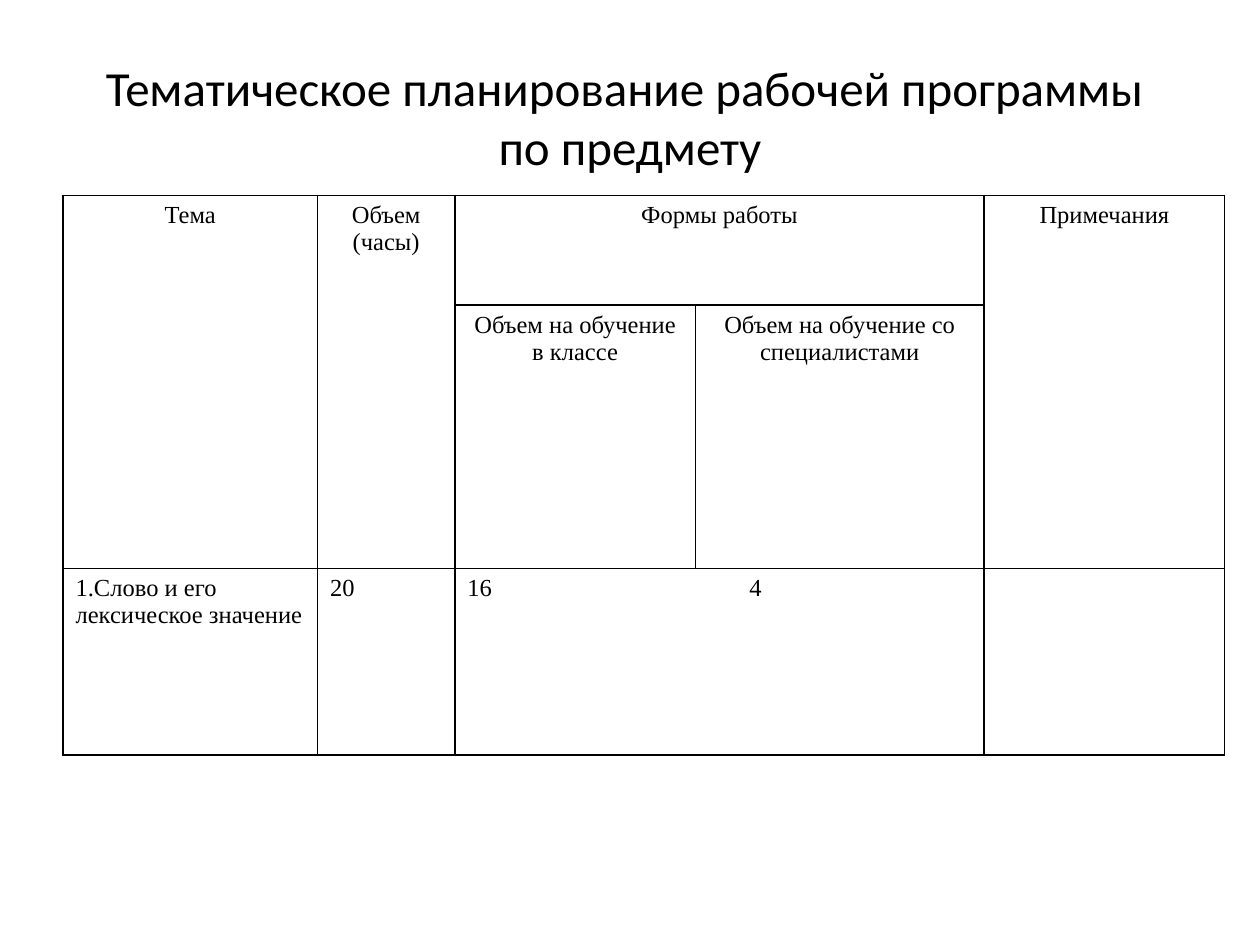
import pptx
import pptx.dml.color
import pptx.enum.text
import pptx.oxml
import pptx.oxml.ns
import pptx.util
from pptx.util import Cm

BLACK = pptx.dml.color.RGBColor(0x00, 0x00, 0x00)
CENTER = pptx.enum.text.PP_ALIGN.CENTER
LEFT = pptx.enum.text.PP_ALIGN.LEFT
NAMESPACE = pptx.oxml.ns.nsdecls("a")

COLUMN_WIDTHS = [5.13, 2.77, 4.85, 5.82, 4.85]
ROW_HEIGHTS = [2.21, 5.31, 3.76]
# First and last cell of each merged area, as (row, column)
MERGES = [
    ((0, 0), (1, 0)),
    ((0, 1), (1, 1)),
    ((0, 2), (0, 3)),
    ((0, 4), (1, 4)),
    ((2, 2), (2, 3)),
]
HEADER_ROWS = 2
CELL_TEXTS = {
    (0, 0): "Тема",
    (0, 1): "Объем (часы)",
    (0, 2): "Формы работы",
    (0, 4): "Примечания",
    (1, 2): "Объем на обучение в классе",
    (1, 3): "Объем на обучение со специалистами",
    (2, 0): "1.Слово и его лексическое значение",
    (2, 1): "20",
    (2, 2): "16\t4",
}


def style_paragraph(para, font_name, size, alignment):
    para.alignment = alignment
    para.font.name = font_name
    para.font.size = pptx.util.Pt(size)
    para.font.color.rgb = BLACK


def add_borders(cell):
    properties = cell._tc.get_or_add_tcPr()
    for side in ("lnL", "lnR", "lnT", "lnB"):
        properties.append(pptx.oxml.parse_xml(
            f'<a:{side} {NAMESPACE} w="12700"><a:solidFill>'
            f'<a:srgbClr val="{BLACK}"/></a:solidFill></a:{side}>'))


def add_tab_stop(para, position):
    para._p.get_or_add_pPr().append(pptx.oxml.parse_xml(
        f'<a:tabLst {NAMESPACE}><a:tab pos="{position}" algn="l"/></a:tabLst>'))


def add_title(page, left, top, width, height):
    box = page.shapes.add_textbox(left, top, width, height)
    frame = box.text_frame
    frame.word_wrap = True
    frame.vertical_anchor = pptx.enum.text.MSO_ANCHOR.MIDDLE
    para = frame.paragraphs[0]
    para.text = "Тематическое планирование рабочей программы \vпо предмету"
    style_paragraph(para, "Calibri", 28, CENTER)


def add_plan_table(page, left, top):
    table = page.shapes.add_table(
        len(ROW_HEIGHTS), len(COLUMN_WIDTHS), left, top,
        Cm(sum(COLUMN_WIDTHS)), Cm(sum(ROW_HEIGHTS))).table
    table.first_row = False
    table.horz_banding = False
    for column, width in zip(table.columns, COLUMN_WIDTHS):
        column.width = Cm(width)
    for row, height in zip(table.rows, ROW_HEIGHTS):
        row.height = Cm(height)

    # Plain bordered cells
    for cell in table.iter_cells():
        add_borders(cell)
        cell.fill.background()
    for first, last in MERGES:
        table.cell(*first).merge(table.cell(*last))

    # Headings are centred, data is left-aligned
    for (row, column), text in CELL_TEXTS.items():
        para = table.cell(row, column).text_frame.paragraphs[0]
        para.text = text
        style_paragraph(para, "Times New Roman", 14,
                        CENTER if row < HEADER_ROWS else LEFT)
        if "\t" in text:
            add_tab_stop(para, Cm(5.68))


def main():
    deck = pptx.Presentation()
    deck.slide_width = Cm(25.4)
    deck.slide_height = Cm(19.05)
    page = deck.slides.add_slide(deck.slide_layouts[6])
    add_title(page, Cm(1.27), Cm(0.76), Cm(22.86), Cm(3.18))
    add_plan_table(page, Cm(1.27), Cm(3.94))
    deck.save("out.pptx")


if __name__ == "__main__":
    main()
